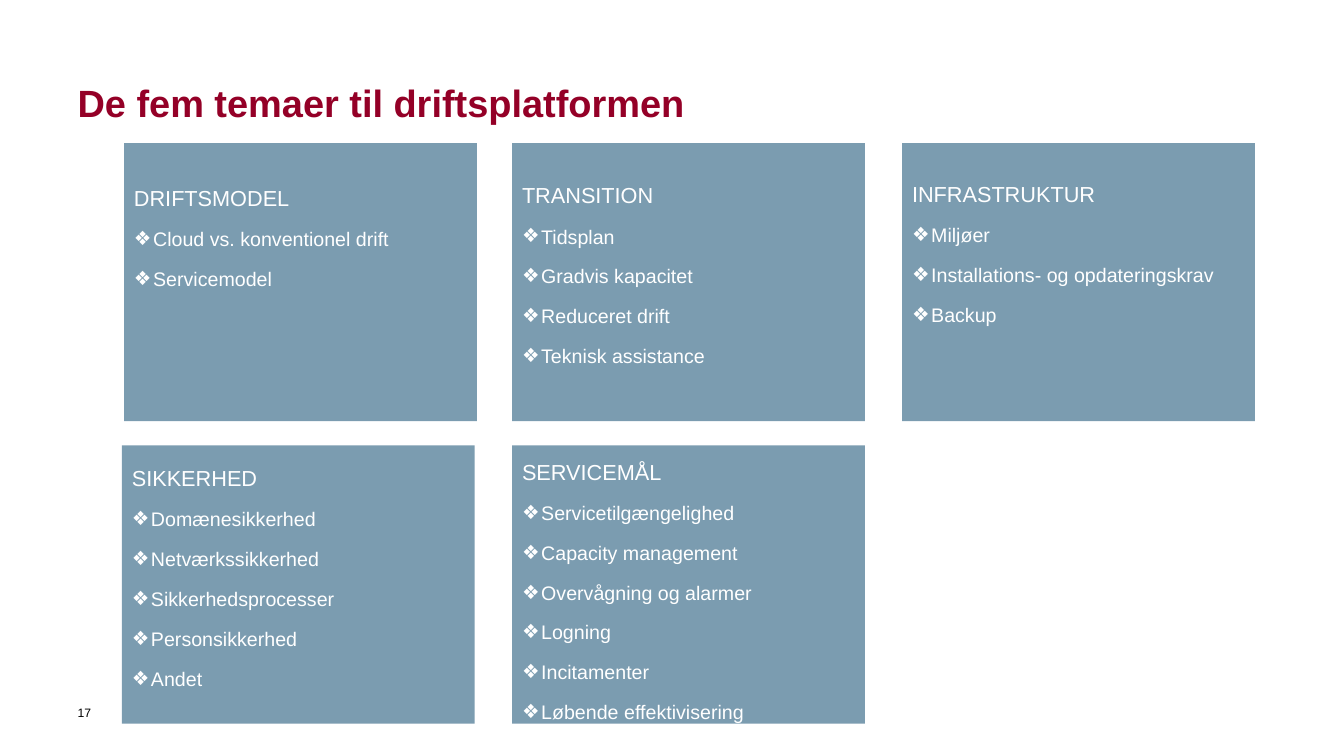
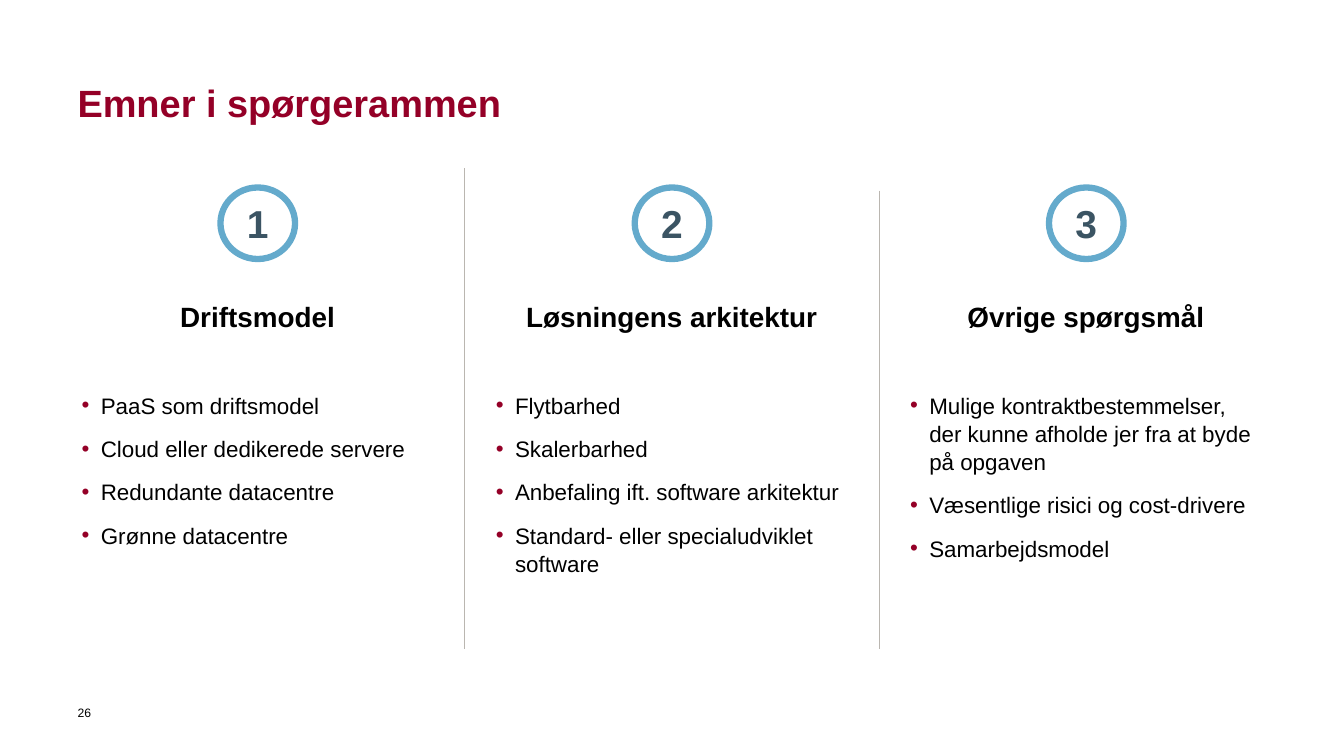
from lxml import etree
from pptx import Presentation
from pptx.dml.color import RGBColor
from pptx.enum.shapes import MSO_CONNECTOR, MSO_SHAPE
from pptx.enum.text import MSO_ANCHOR, PP_ALIGN
from pptx.oxml.ns import qn
from pptx.util import Pt

RECTANGLE, OVAL = MSO_SHAPE.RECTANGLE, MSO_SHAPE.OVAL
STRAIGHT = MSO_CONNECTOR.STRAIGHT
LEFT, CENTER = PP_ALIGN.LEFT, PP_ALIGN.CENTER
TOP, MIDDLE = MSO_ANCHOR.TOP, MSO_ANCHOR.MIDDLE

RED, BLUE_GREY, LIGHT_BLUE = "940027", "7B9CB0", "64AACC"
SLATE, LINE_GREY, BLACK, WHITE = "3B5463", "BAB6B0", "000000", "FFFFFF"
FONT = "Arial"
GAP = 10.8


def color(value):
    return RGBColor.from_string(value)


def add_bullet(para, mark, tint, indent):
    props = para._p.get_or_add_pPr()
    props.set("marL", str(Pt(indent)))
    props.set("indent", str(-Pt(indent)))
    fill = etree.SubElement(props, qn("a:buClr"))
    etree.SubElement(fill, qn("a:srgbClr"), val=tint)
    etree.SubElement(props, qn("a:buFont"), typeface=FONT)
    etree.SubElement(props, qn("a:buChar"), char=mark)


def write(frame, text, *, size, tint=BLACK, bold=False, align=LEFT,
          before=0, spacing=None, mark=None, mark_tint=None):
    para = frame.paragraphs[0]
    if para.runs:
        para = frame.add_paragraph()
    if mark:
        add_bullet(para, mark, mark_tint or tint, 13.7)
    para.alignment = align
    para.space_before = Pt(before)
    if spacing:
        para.line_spacing = spacing
    span = para.add_run()
    span.text = text
    span.font.name = FONT
    span.font.size = Pt(size)
    span.font.bold = bold
    span.font.color.rgb = color(tint)


class Deck:
    def __init__(self):
        self.deck = Presentation()
        self.deck.slide_width = Pt(960)
        self.deck.slide_height = Pt(540)
        self.page = None

    def new_page(self, title, number):
        self.page = self.deck.slides.add_slide(self.deck.slide_layouts[6])
        frame = self.text(55.4, 28.8, 849.6, 73.4, (0, 28, 81.4, 0))
        write(frame, title, size=27.1, tint=RED, bold=True)
        frame = self.text(55.4, 504, 22.3, 21.6)
        write(frame, str(number), size=8.7)

    def set_frame(self, box, insets, anchor):
        frame = box.text_frame
        frame.word_wrap = True
        frame.vertical_anchor = anchor
        (frame.margin_left, frame.margin_top,
         frame.margin_right, frame.margin_bottom) = map(Pt, insets)
        return frame

    def text(self, left, top, width, height, insets=(0, 0, 0, 0)):
        box = self.page.shapes.add_textbox(*map(Pt, (left, top, width, height)))
        return self.set_frame(box, insets, TOP)

    def shape(self, kind, left, top, width, height):
        box = self.page.shapes.add_shape(kind, *map(Pt, (left, top, width, height)))
        box.shadow.inherit = False
        return box

    def card(self, left, top, inset, heading, items):
        box = self.shape(RECTANGLE, left, top, 252, 198.7)
        box.fill.solid()
        box.fill.fore_color.rgb = color(BLUE_GREY)
        box.line.fill.background()
        frame = self.set_frame(box, (7.2, inset, 7.2, 0), TOP)
        write(frame, heading, size=15.5, tint=WHITE, spacing=1.05)
        for item in items:
            write(frame, item, size=14, tint=WHITE, before=GAP,
                  spacing=1.05, mark="❖")

    def badge(self, left, top, number):
        box = self.shape(OVAL, left, top, 53.3, 51.1)
        box.fill.background()
        box.line.color.rgb = color(LIGHT_BLUE)
        box.line.width = Pt(4.5)
        frame = self.set_frame(box, (0, 0, 0, 0), MIDDLE)
        write(frame, str(number), size=27.8, tint=SLATE, bold=True, align=CENTER)

    def topic(self, left, top, heading, items):
        frame = self.text(left, top, 251.3, 250.6)
        write(frame, heading, size=19.9, bold=True, align=CENTER, spacing=1.05)
        for index, item in enumerate(items):
            write(frame, item, size=16, before=GAP if index else 40.8,
                  spacing=1.05, mark="•", mark_tint=RED)

    def divider(self, left, top, bottom):
        line = self.page.shapes.add_connector(
            STRAIGHT, Pt(left), Pt(top), Pt(left), Pt(bottom))
        line.line.color.rgb = color(LINE_GREY)
        line.line.width = Pt(0.25)
        etree.SubElement(line._element.spPr, qn("a:effectLst"))


def build_themes(deck):
    deck.new_page("De fem temaer til driftsplatformen", 17)
    upper, lower = 102.2, 318.2
    cards = [
        (88.6, upper, 29, "DRIFTSMODEL",
         ["Cloud vs. konventionel drift", "Servicemodel"]),
        (365.8, upper, 27, "TRANSITION",
         ["Tidsplan", "Gradvis kapacitet", "Reduceret drift",
          "Teknisk assistance"]),
        (644.4, upper, 26.2, "INFRASTRUKTUR",
         ["Miljøer", "Installations- og opdateringskrav", "Backup"]),
        (87.1, lower, 13, "SIKKERHED",
         ["Domænesikkerhed", "Netværkssikkerhed", "Sikkerhedsprocesser",
          "Personsikkerhed", "Andet"]),
        (365.8, lower, 8.5, "SERVICEMÅL",
         ["Servicetilgængelighed", "Capacity management",
          "Overvågning og alarmer", "Logning", "Incitamenter",
          "Løbende effektivisering"]),
    ]
    for card in cards:
        deck.card(*card)


def build_questions(deck):
    deck.new_page("Emner i spørgerammen", 26)
    topics = [
        ("Driftsmodel",
         ["PaaS som driftsmodel", "Cloud eller dedikerede servere",
          "Redundante datacentre", "Grønne datacentre"]),
        ("Løsningens arkitektur",
         ["Flytbarhed", "Skalerbarhed", "Anbefaling ift. software arkitektur",
          "Standard- eller specialudviklet software"]),
        ("Øvrige spørgsmål",
         ["Mulige kontraktbestemmelser, der kunne afholde jer fra at byde "
          "på opgaven", "Væsentlige risici og cost-drivere",
          "Samarbejdsmodel"]),
    ]
    pitch = 295.9
    for index, (heading, items) in enumerate(topics):
        left = 58.3 + index * pitch
        deck.badge(left + 99.2, 133.9, index + 1)
        deck.topic(left, 213.1, heading, items)
    for index, top in enumerate((120.2, 136.1)):
        deck.divider(331.9 + index * pitch, top, 463.7)


def main():
    deck = Deck()
    build_themes(deck)
    build_questions(deck)
    deck.deck.save("out.pptx")


if __name__ == "__main__":
    main()
